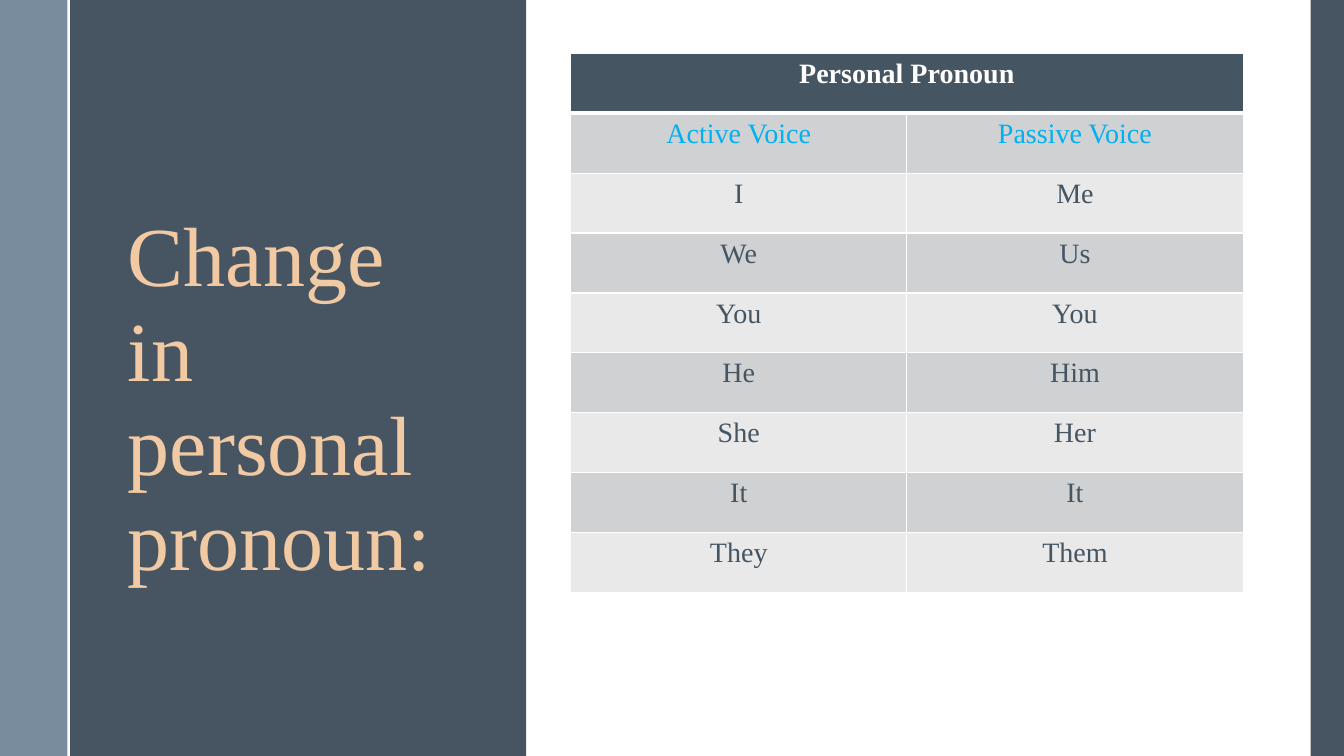
"""Build a slide showing how personal pronouns change from active to passive voice."""
from lxml import etree
from pptx import Presentation
from pptx import util as u
from pptx.dml.color import RGBColor
from pptx.enum import shapes, text
from pptx.oxml.ns import qn

TITLE = "Change in personal pronoun:"
HEADING = "Personal Pronoun"
VOICES = ("Active Voice", "Passive Voice")
PRONOUNS = [
    ("I", "Me"),
    ("We", "Us"),
    ("You", "You"),
    ("He", "Him"),
    ("She", "Her"),
    ("It", "It"),
    ("They", "Them"),
]

FONT = "Times New Roman"
WHITE = RGBColor(0xFF, 0xFF, 0xFF)
SLATE = RGBColor(0x47, 0x55, 0x62)
TABLE_SLATE = RGBColor(0x46, 0x55, 0x62)
STEEL = RGBColor(0x6A, 0x80, 0x93)
PEACH = RGBColor(0xF1, 0xC9, 0xA3)
CYAN = RGBColor(0x00, 0xB0, 0xF0)
BANDS = (RGBColor(0xCF, 0xD1, 0xD3), RGBColor(0xE9, 0xE9, 0xEA))

WIDTH, HEIGHT = 13.33, 7.5
PANELS = [(0.68, 4.54, SLATE, None), (0, 0.67, STEEL, 90), (13, 0.33, SLATE, None)]
DIVIDER_X = 0.68
TITLE_BOX = (1.17, 2.04, 3.55, 4.71)
TABLE_BOX = (5.66, 0.53, 6.67, 5.35)

HEADING_FORMAT = {"size": u.Pt(20), "name": FONT, "bold": True}
BODY_FORMAT = {"size": u.Pt(20), "name": FONT, "bold": False}
TITLE_FORMAT = {"size": u.Pt(60), "name": FONT, "bold": False}


def inches(values):
    return [u.Inches(value) for value in values]


def write(paragraph, words, color, font_format):
    run = paragraph.add_run()
    run.text = words
    for name, value in font_format.items():
        setattr(run.font, name, value)
    run.font.color.rgb = color


def add_panel(slide, left, width, color, opacity):
    shape = slide.shapes.add_shape(
        shapes.MSO_SHAPE.RECTANGLE, *inches((left, 0, width, HEIGHT)))
    shape.shadow.inherit = False
    shape.fill.solid()
    shape.fill.fore_color.rgb = color
    shape.line.fill.background()
    if opacity:
        tint = shape.fill._xPr.find(".//" + qn("a:srgbClr"))
        etree.SubElement(tint, qn("a:alpha"), val=str(opacity * 1000))


def add_divider(slide):
    line = slide.shapes.add_connector(
        shapes.MSO_CONNECTOR.STRAIGHT, *inches((DIVIDER_X, 0, DIVIDER_X, HEIGHT)))
    line.line.color.rgb = WHITE
    line.line.width = u.Pt(1.5)
    etree.SubElement(line._element.spPr, qn("a:effectLst"))


def add_title(slide):
    frame = slide.shapes.add_textbox(*inches(TITLE_BOX)).text_frame
    frame.word_wrap = True
    paragraph = frame.paragraphs[0]
    paragraph.line_spacing = 0.94
    write(paragraph, TITLE, PEACH, TITLE_FORMAT)


def set_borders(cell, top, bottom):
    properties = cell._tc.get_or_add_tcPr()
    widths = {"a:lnL": 1, "a:lnR": 1, "a:lnT": top, "a:lnB": bottom}
    for index, (tag, width) in enumerate(widths.items()):
        border = etree.Element(qn(tag), w=str(u.Pt(width)))
        fill = etree.SubElement(border, qn("a:solidFill"))
        etree.SubElement(fill, qn("a:srgbClr"), val=str(WHITE))
        properties.insert(index, border)


def add_pronoun_table(slide):
    rows = [(HEADING, ""), VOICES, *PRONOUNS]
    table = slide.shapes.add_table(len(rows), 2, *inches(TABLE_BOX)).table
    for column in table.columns:
        column.width = u.Inches(TABLE_BOX[2] / 2)
    for row in table.rows:
        row.height = u.Inches(TABLE_BOX[3] / len(rows))
    table.cell(0, 0).merge(table.cell(0, 1))
    for row_index, row in enumerate(rows):
        heading = row_index == 0
        color = {0: WHITE, 1: CYAN}.get(row_index, TABLE_SLATE)
        for column_index, words in enumerate(row):
            cell = table.cell(row_index, column_index)
            cell.fill.solid()
            cell.fill.fore_color.rgb = TABLE_SLATE if heading else BANDS[(row_index - 1) % 2]
            set_borders(cell, 3 if row_index == 1 else 1, 3 if heading else 1)
            if words:
                paragraph = cell.text_frame.paragraphs[0]
                paragraph.alignment = text.PP_ALIGN.CENTER
                write(paragraph, words, color, HEADING_FORMAT if heading else BODY_FORMAT)


def main():
    presentation = Presentation()
    presentation.slide_width, presentation.slide_height = inches((WIDTH, HEIGHT))
    slide = presentation.slides.add_slide(presentation.slide_layouts[6])
    slide.background.fill.solid()
    slide.background.fill.fore_color.rgb = WHITE
    for panel in PANELS:
        add_panel(slide, *panel)
    add_divider(slide)
    add_pronoun_table(slide)
    add_title(slide)
    presentation.save("out.pptx")


if __name__ == "__main__":
    main()
